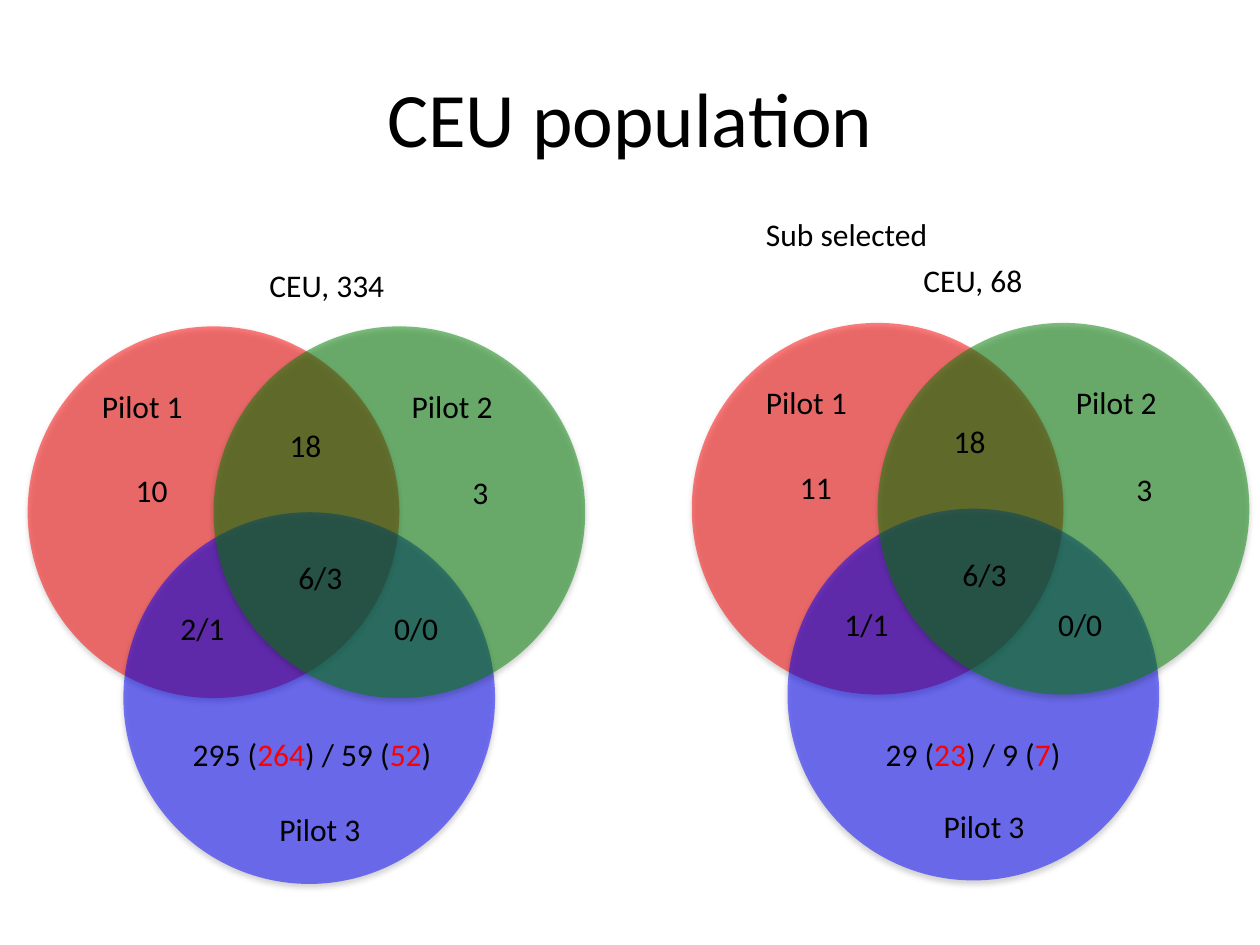
import pptx
import pptx.util
import pptx.dml.color
import pptx.enum.shapes
import pptx.enum.text
import pptx.oxml.ns
from lxml import etree

Pt = pptx.util.Pt
COLORS = {"red": "FF0000", "blue": "0000FF", "green": "008000", "black": "000000"}
DIAMETER = 212.4
CIRCLES = [("red", 0, 0), ("blue", 54.7, 106.2), ("green", 106.2, 0)]


def add_child(parent, tag, **attributes):
    return etree.SubElement(parent, pptx.oxml.ns.qn(tag), attributes)


def add_label(shapes, parts, left, top, width, height=29, size=18):
    box = shapes.add_textbox(Pt(left), Pt(top), Pt(width), Pt(height))
    frame = box.text_frame
    frame.word_wrap = False
    frame.auto_size = pptx.enum.text.MSO_AUTO_SIZE.SHAPE_TO_FIT_TEXT
    for index, part in enumerate(parts):
        run = frame.paragraphs[0].add_run()
        run.text = part
        run.font.name = "Calibri"
        run.font.size = Pt(size)
        color = COLORS["red" if index % 2 else "black"]
        run.font.color.rgb = pptx.dml.color.RGBColor.from_string(color)
    return box


presentation = pptx.Presentation()
presentation.slide_width = Pt(720)
presentation.slide_height = Pt(540)
slide = presentation.slides.add_slide(presentation.slide_layouts[6])

title = add_label(slide.shapes, ["CEU population"], 36, 21.6, 648, 90, 44)
title.text_frame.word_wrap = True
title.text_frame.auto_size = pptx.enum.text.MSO_AUTO_SIZE.NONE
title.text_frame.vertical_anchor = pptx.enum.text.MSO_ANCHOR.MIDDLE
title.text_frame.paragraphs[0].alignment = pptx.enum.text.PP_ALIGN.CENTER

diagrams = [
    (15.8, 186.5, "10", "2/1"),
    (395.3, 184.5, "11", "1/1"),
]
for origin_left, origin_top, pilot_1_only, pilots_1_and_3 in diagrams:
    venn = slide.shapes.add_group_shape()
    for color, left, top in CIRCLES:
        circle = venn.shapes.add_shape(
            pptx.enum.shapes.MSO_SHAPE.OVAL,
            Pt(origin_left + left), Pt(origin_top + top), Pt(DIAMETER), Pt(DIAMETER))
        circle.fill.solid()
        circle.fill.fore_color.rgb = pptx.dml.color.RGBColor.from_string(COLORS[color])
        circle.line.fill.background()
        circle.shadow.inherit = False
        properties = circle.element.spPr
        fill_color = properties.find(".//" + pptx.oxml.ns.qn("a:srgbClr"))
        add_child(fill_color, "a:alpha", val="50000")
        effects = properties.find(pptx.oxml.ns.qn("a:effectLst"))
        shadow = add_child(effects, "a:outerShdw", blurRad="40000", dist="23000",
                           dir="5400000", rotWithShape="0")
        shadow_color = add_child(shadow, "a:srgbClr", val=COLORS["black"])
        add_child(shadow_color, "a:alpha", val="35000")

    labels = [
        ("18", 142.6, 53.2, 33.1),
        ("0/0", 202.3, 157.9, 40.3),
        ("Pilot 2", 212.4, 31, 61.2),
        ("Pilot 3", 136.8, 272.9, 61.2),
        ("Pilot 1", 35.3, 31, 61.2),
        (pilots_1_and_3, 80.2, 157.9, 40.3),
        ("6/3", 147.6, 128.9, 40.3),
        (pilot_1_only, 54.7, 79.2, 33.1),
        ("3", 247, 80.3, 23.8),
    ]
    for text, left, top, width in labels:
        add_label(venn.shapes, [text], origin_left + left, origin_top + top, width)

add_label(slide.shapes, ["CEU, 334"], 146.9, 148.3, 80.6)
add_label(slide.shapes, ["CEU, 68"], 520.6, 145.7, 71.3)
add_label(slide.shapes, ["Sub selected"], 430.6, 119.5, 107.3)
add_label(slide.shapes, ["295 (", "264", ") / 59 (", "52", ")"], 103, 416.2, 151.9)
add_label(venn.shapes, ["29 (", "23", ") / 9 (", "7", ")"], 499, 416.2, 115.2)

presentation.save("out.pptx")
